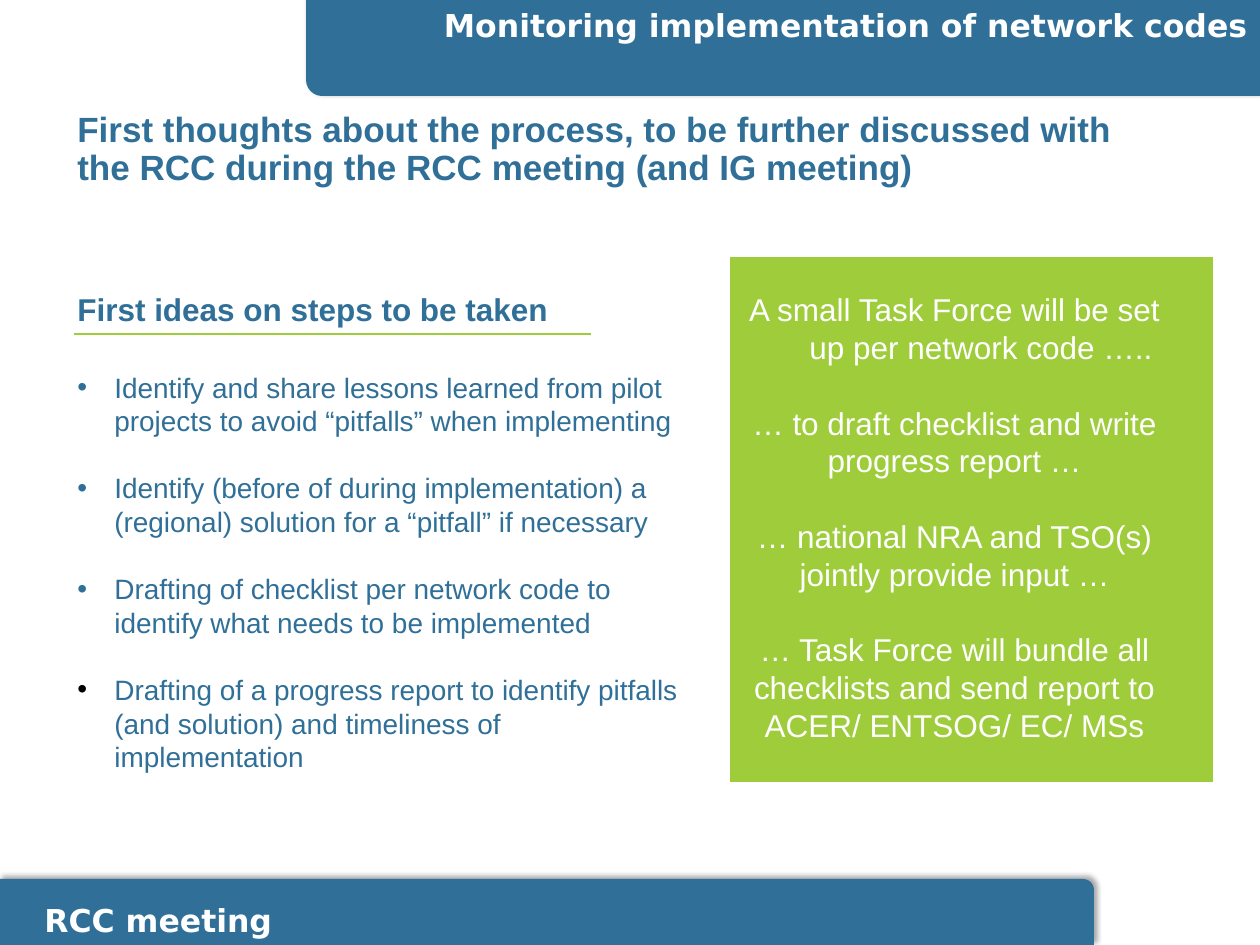
from dataclasses import dataclass

from lxml.etree import SubElement
from pptx import Presentation
from pptx.dml.color import RGBColor
from pptx.enum.shapes import MSO_CONNECTOR as Link, MSO_SHAPE as Shape
from pptx.enum.text import MSO_ANCHOR as Anchor, PP_ALIGN as Align
from pptx.oxml.ns import qn
from pptx.util import Emu, Pt

BLUE, GREEN, WHITE, BLACK = "307098", "9ECC3B", "FFFFFF", "000000"
SANS, HEAD = "Arial", "DejaVu Sans"


@dataclass
class Box:
    left: int
    top: int
    width: int
    height: int


@dataclass
class Style:
    size: int
    color: str
    font: str = SANS
    bold: bool = False


@dataclass
class Para:
    text: str
    bullet: str = ""
    hang: int = 0


def px(count: int) -> Emu:
    return Emu(round(count * 914400 / 126))


def rgb(code: str) -> RGBColor:
    return RGBColor.from_string(code)


def place(box: Box) -> list[Emu]:
    return [px(n) for n in (box.left, box.top, box.width, box.height)]


def add_bullet(props, color: str) -> None:
    tint = SubElement(props, qn("a:buClr"))
    SubElement(tint, qn("a:srgbClr"), val=color)
    SubElement(props, qn("a:buFont"), typeface=SANS)
    SubElement(props, qn("a:buChar"), char="•")


def add_text(slide, box: Box, paras: list[Para], style: Style,
             gap: float = 0, line: float = 1.0,
             align: Align = Align.LEFT, anchor: Anchor = Anchor.TOP) -> None:
    frame = slide.shapes.add_textbox(*place(box)).text_frame
    frame.word_wrap = True
    frame.vertical_anchor = anchor
    for i, item in enumerate(paras):
        para = frame.paragraphs[0] if i == 0 else frame.add_paragraph()
        props = para._p.get_or_add_pPr()
        if item.hang:
            props.set("marL", str(px(item.hang)))
            props.set("indent", str(-px(item.hang)))
        if item.bullet:
            add_bullet(props, item.bullet)
        looks = {"alignment": align, "line_spacing": line}
        if i and gap:
            looks["space_before"] = Pt(gap)
        for name, value in looks.items():
            setattr(para, name, value)
        run = para.add_run()
        run.text = item.text
        fonts = {"name": style.font, "size": Pt(style.size), "bold": style.bold}
        for name, value in fonts.items():
            setattr(run.font, name, value)
        run.font.color.rgb = rgb(style.color)


def add_block(slide, kind: Shape, box: Box, fill: str):
    block = slide.shapes.add_shape(kind, *place(box))
    block.shadow.inherit = False
    block.fill.solid()
    block.fill.fore_color.rgb = rgb(fill)
    block.line.fill.background()
    return block


def add_bar(slide, box: Box, turn: int = 0) -> None:
    """Blue band with one round corner and a soft shadow."""
    bar = add_block(slide, Shape.ROUND_1_RECTANGLE, box, BLUE)
    bar.rotation = turn
    effects = bar._element.spPr.find(qn("a:effectLst"))
    shade = SubElement(effects, qn("a:outerShdw"), blurRad=str(Pt(3.1)),
                       dist=str(Pt(1.8)), dir=str(306 * 60000),
                       algn="ctr", rotWithShape="0")
    tint = SubElement(shade, qn("a:srgbClr"), val=BLACK)
    SubElement(tint, qn("a:alpha"), val="35000")


def add_rule(slide, left: int, right: int, y: int) -> None:
    rule = slide.shapes.add_connector(Link.STRAIGHT, px(left), px(y), px(right), px(y))
    rule.line.color.rgb = rgb(GREEN)
    rule.line.width = Pt(1.25)
    SubElement(rule._element.spPr, qn("a:effectLst"))


STEPS = [
    Para("Identify and share lessons learned from pilot projects to avoid "
         "“pitfalls” when implementing", BLUE, 37),
    Para("Identify (before of during implementation) a (regional) solution "
         "for a “pitfall” if necessary", BLUE, 37),
    Para("Drafting of checklist per network code to identify what needs "
         "to be implemented", BLUE, 37),
    Para("Drafting of a progress report to identify pitfalls (and solution) "
         "and timeliness of implementation", BLACK, 37),
]
TASKS = [
    Para("A small Task Force will be set up per network code …..", hang=53),
    Para("… to draft checklist and write progress report …"),
    Para("… national NRA and TSO(s) jointly provide input …"),
    Para("… Task Force will bundle all checklists and send report to "
         "ACER/ ENTSOG/ EC/ MSs"),
]


def main() -> None:
    deck = Presentation()
    deck.slide_width, deck.slide_height = px(1260), px(945)
    slide = deck.slides.add_slide(deck.slide_layouts[6])

    add_bar(slide, Box(0, 879, 1094, 66))
    add_bar(slide, Box(306, 0, 954, 96), 180)
    label = Style(18, WHITE, HEAD, True)
    add_text(slide, Box(32, 895, 518, 50), [Para("RCC meeting")], label)
    add_text(slide, Box(280, 0, 980, 50),
             [Para("Monitoring implementation of network codes")], label,
             align=Align.RIGHT)

    title = ("First thoughts about the process, to be further discussed with "
             "the RCC during the RCC meeting (and IG meeting)")
    add_text(slide, Box(65, 108, 1061, 84), [Para(title)],
             Style(20, BLUE, bold=True), line=0.9, anchor=Anchor.MIDDLE)

    add_text(slide, Box(65, 364, 635, 420), STEPS, Style(16, BLUE), gap=19.2)

    panel = add_block(slide, Shape.RECTANGLE, Box(729, 256, 485, 527), GREEN)
    panel.line.color.rgb = rgb(WHITE)
    panel.line.width = Pt(0.75)
    add_text(slide, Box(729, 284, 451, 547), TASKS, Style(18, WHITE),
             gap=21.6, align=Align.CENTER)

    add_text(slide, Box(65, 284, 556, 50), [Para("First ideas on steps to be taken")],
             Style(18, BLUE, bold=True))
    add_rule(slide, 74, 591, 334)
    deck.save("out.pptx")


if __name__ == "__main__":
    main()
